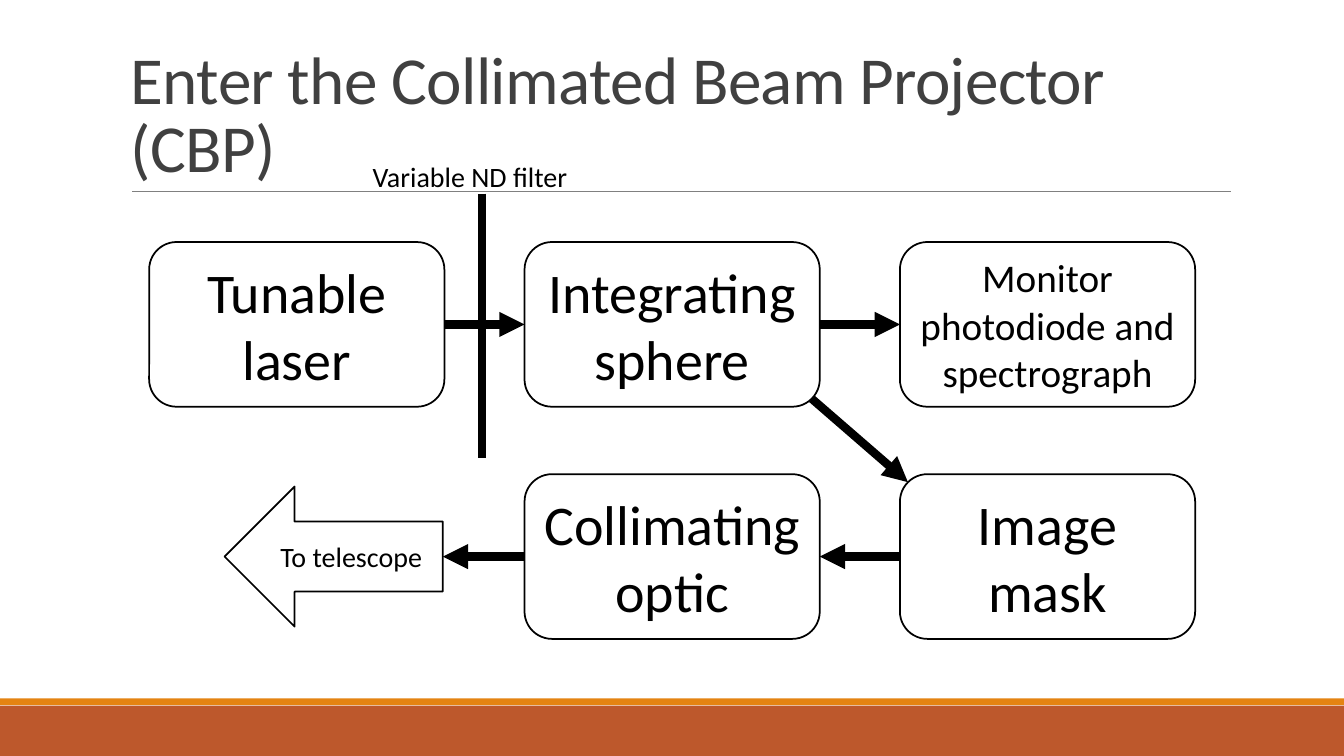
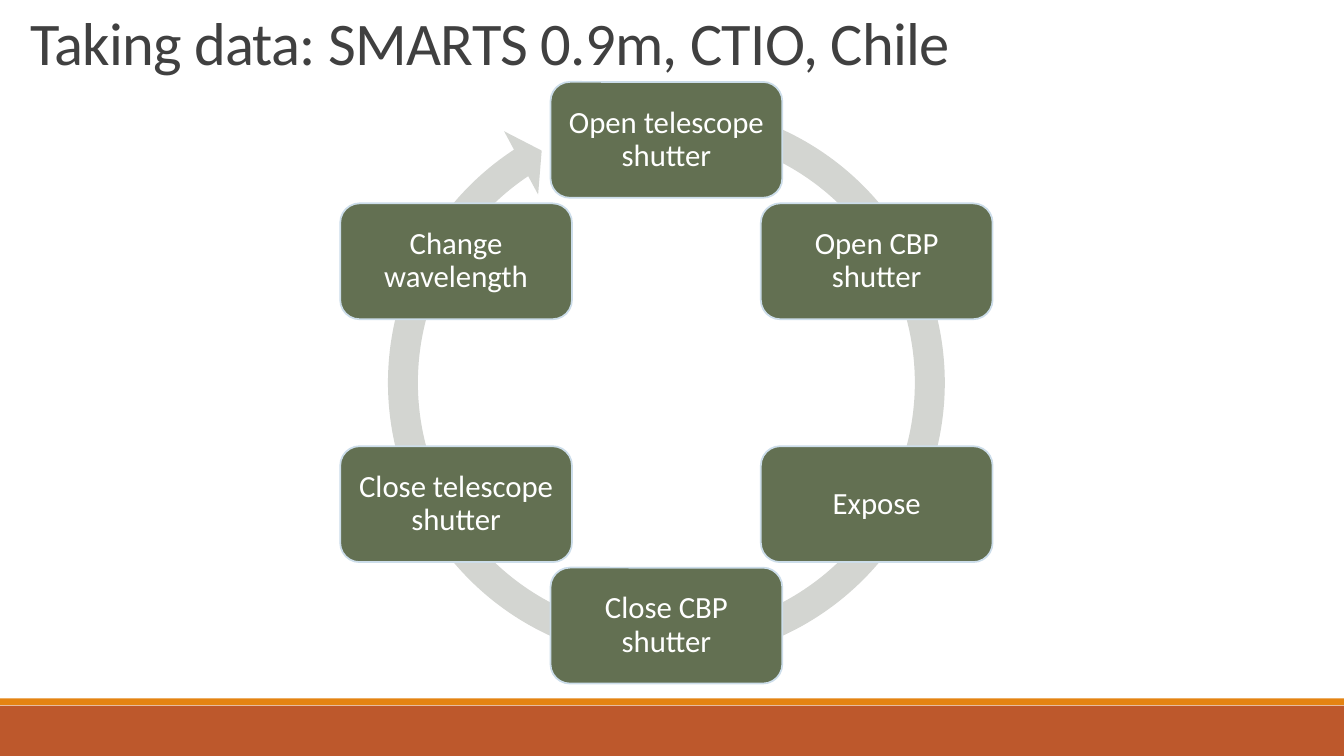
from math import cos, radians, sin

from pptx import Presentation
from pptx.dml.color import RGBColor
from pptx.enum.shapes import MSO_CONNECTOR, MSO_SHAPE
from pptx.enum.text import MSO_ANCHOR as Anchor, PP_ALIGN as Align
from pptx.oxml.ns import qn
from pptx.oxml.xmlchemy import OxmlElement
from pptx.util import Cm, Pt

FONT = "Calibri"
WIDTH, HEIGHT = 33.87, 19.05
BLACK, WHITE = "000000", "FFFFFF"
RUST, ORANGE, RULE_GREY, TITLE_GREY = "BD582C", "E48312", "808080", "404040"
OLIVE, PALE_BLUE, RING_GREY = "637052", "CCDDEA", "D3D5D1"
TOP, LEFT, BOTTOM, RIGHT = range(4)


def color(hex_text):
    """Turn a hex string into a colour."""
    return RGBColor.from_string(hex_text)


def write(shape, text, size, hex_text, align=Align.LEFT, anchor=Anchor.TOP, spacing=None):
    """Put one wrapped paragraph into a shape and return it."""
    frame = shape.text_frame
    frame.word_wrap = True
    frame.vertical_anchor = anchor
    paragraph = frame.paragraphs[0]
    paragraph.text = text
    paragraph.alignment = align
    if spacing:
        paragraph.line_spacing = spacing
    font = paragraph.font
    font.name, font.size = FONT, Pt(size)
    font.color.rgb = color(hex_text)
    return paragraph


def add_box(slide, kind, box, fill, outline=None):
    """Draw a filled preset shape in a box of left, top, width and height."""
    shape = slide.shapes.add_shape(kind, *map(Cm, box))
    shape.shadow.inherit = False
    shape.fill.solid()
    shape.fill.fore_color.rgb = color(fill)
    if outline:
        shape.line.color.rgb = color(outline)
        shape.line.width = Pt(1.25)
    else:
        shape.line.fill.background()
    return shape


def add_line(slide, start, end, hex_text=BLACK, width=6, arrow=False):
    """Draw a straight line between two points, with an optional arrowhead."""
    line = slide.shapes.add_connector(MSO_CONNECTOR.STRAIGHT, *map(Cm, start + end))
    line.line.color.rgb = color(hex_text)
    line.line.width = Pt(width)
    properties = line._element.spPr
    if arrow:
        head = OxmlElement("a:tailEnd")
        head.set("type", "triangle")
        properties.find(qn("a:ln")).append(head)
    properties.append(OxmlElement("a:effectLst"))
    return line


def join(slide, source, source_side, target, target_side):
    """Draw an arrow joined to the sides of two shapes."""
    arrow = add_line(slide, (0, 0), (0, 0), arrow=True)
    arrow.begin_connect(source, source_side)
    arrow.end_connect(target, target_side)


def add_title(slide, box, text, size):
    """Place a title at the bottom of its box."""
    shape = slide.shapes.add_textbox(*map(Cm, box))
    paragraph = write(shape, text, size, TITLE_GREY, anchor=Anchor.BOTTOM, spacing=0.85)
    paragraph.runs[0]._r.get_or_add_rPr().set("spc", "-50")


def add_slide(presentation):
    """Add a blank slide with the two footer bands."""
    slide = presentation.slides.add_slide(presentation.slide_layouts[6])
    add_box(slide, MSO_SHAPE.RECTANGLE, (0, 17.78, WIDTH, 1.27), RUST)
    add_box(slide, MSO_SHAPE.RECTANGLE, (0, 17.6, WIDTH, 0.17), ORANGE)
    return slide


def add_projector_diagram(slide, left, top):
    """Draw the light path from the laser to the telescope."""
    width, height, column_step, row_step = 7.44, 4.15, 9.46, 5.85

    def stage(text, column, row, size=40):
        """Draw one stage in its grid cell."""
        box = (left + column * column_step, top + row * row_step, width, height)
        shape = add_box(slide, MSO_SHAPE.ROUNDED_RECTANGLE, box, WHITE, BLACK)
        write(shape, text, size, BLACK, Align.CENTER, Anchor.MIDDLE)
        return shape

    laser = stage("Tunable laser", 0, 0)
    sphere = stage("Integrating sphere", 1, 0)
    monitor = stage("Monitor photodiode and spectrograph", 2, 0, 28)
    mask = stage("Image mask", 2, 1)
    optic = stage("Collimating optic", 1, 1)

    exit_height = 3.53
    exit_top = top + row_step + (height - exit_height) / 2
    telescope = add_box(slide, MSO_SHAPE.LEFT_ARROW,
                        (left + 1.9, exit_top, 5.5, exit_height), WHITE, BLACK)
    write(telescope, "To telescope", 20, BLACK, Align.CENTER, Anchor.MIDDLE)

    join(slide, laser, RIGHT, sphere, LEFT)
    join(slide, sphere, RIGHT, monitor, LEFT)
    join(slide, mask, LEFT, optic, RIGHT)
    join(slide, optic, LEFT, telescope, RIGHT)

    corner = 0.2
    add_line(slide,
             (left + column_step + width - corner, top + height - corner),
             (left + 2 * column_step + corner, top + row_step + corner), arrow=True)

    filter_x = left + 8.38
    add_line(slide, (filter_x, top - 1.22), (filter_x, top + 5.43))
    label = slide.shapes.add_textbox(*map(Cm, (filter_x - 3, top - 2.21, 6.12, 1.12)))
    write(label, "Variable ND filter", 20, BLACK)


def add_cycle(slide, left, top, size, steps):
    """Draw steps clockwise on a circular arrow, starting at the top."""
    width, height, radius = 5.84, 2.92, 6.12
    ring = add_box(slide, MSO_SHAPE.CIRCULAR_ARROW, (left, top, size, size), RING_GREY)
    for index, value in enumerate((0.05, 3.13, 141.92, 171.48, 0.06)):
        ring.adjustments[index] = value
    for index, text in enumerate(steps):
        angle = radians(360 * index / len(steps))
        center_x = left + size / 2 + radius * sin(angle)
        center_y = top + size / 2 - radius * cos(angle)
        box = (center_x - width / 2, center_y - height / 2, width, height)
        step = add_box(slide, MSO_SHAPE.ROUNDED_RECTANGLE, box, OLIVE, PALE_BLUE)
        write(step, text, 22, WHITE, Align.CENTER, Anchor.MIDDLE, 0.9)


def build_projector_slide(presentation):
    """Build the slide that introduces the projector."""
    slide = add_slide(presentation)
    add_line(slide, (3.33, 4.83), (31.01, 4.83), RULE_GREY, 0.5)
    add_title(slide, (3.05, 0.79, 27.94, 4.04), "Enter the Collimated Beam Projector (CBP)", 48)
    add_projector_diagram(slide, 3.76, 6.1)


def build_data_slide(presentation):
    """Build the slide with the observing cycle."""
    slide = add_slide(presentation)
    add_title(slide, (0.51, -1.6, 24.77, 3.68), "Taking data: SMARTS 0.9m, CTIO, Chile", 43.2)
    add_cycle(slide, 9.25, 2.1, 15.09, (
        "Open telescope shutter", "Open CBP shutter", "Expose",
        "Close CBP shutter", "Close telescope shutter", "Change wavelength"))


def main():
    """Build and save the presentation."""
    presentation = Presentation()
    presentation.slide_width, presentation.slide_height = Cm(WIDTH), Cm(HEIGHT)
    build_projector_slide(presentation)
    build_data_slide(presentation)
    presentation.save("out.pptx")


if __name__ == "__main__":
    main()
